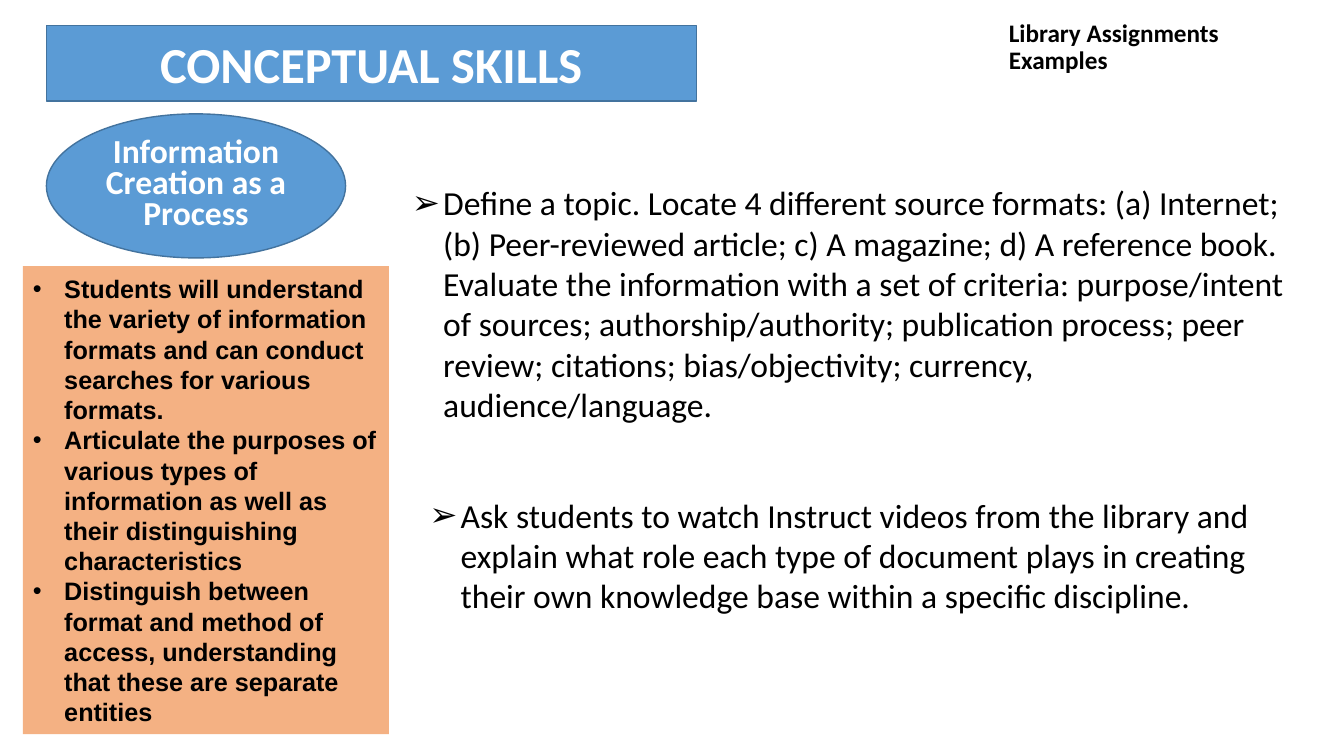
"""Build the slide on conceptual skills and library assignment examples."""
from lxml import etree
from pptx import Presentation
from pptx import util as u
from pptx.dml.color import RGBColor
from pptx.enum import shapes, text
from pptx.oxml.ns import qn

BLUE, EDGE, PEACH, WHITE, BLACK = "5B9BD5", "43739E", "F4B183", "FFFFFF", "000000"
HANG = u.Cm(0.79)


def color(value):
    return RGBColor.from_string(value)


def write(box, lines, size, ink=BLACK, bold=False, face="Calibri", bullet=None,
          anchor=text.MSO_ANCHOR.TOP, **layout):
    frame = box.text_frame
    frame.auto_size = text.MSO_AUTO_SIZE.NONE
    frame.word_wrap = True
    frame.vertical_anchor = anchor
    for index, line in enumerate(lines):
        para = frame.paragraphs[0] if index == 0 else frame.add_paragraph()
        for name, value in layout.items():
            setattr(para, name, value)
        span = para.add_run()
        span.text = line
        for name, value in {"size": u.Pt(size), "bold": bold, "name": face}.items():
            setattr(span.font, name, value)
        span.font.color.rgb = color(ink)
        if bullet:
            props = para._p.get_or_add_pPr()
            props.set("marL", str(HANG))
            props.set("indent", str(-HANG))
            etree.SubElement(props, qn("a:buFont")).set("typeface", "Arial")
            etree.SubElement(props, qn("a:buChar")).set("char", bullet)


deck = Presentation()
deck.slide_width, deck.slide_height = u.Cm(33.87), u.Cm(19.05)
page = deck.slides.add_slide(deck.slide_layouts[5])

title = page.shapes.title
bounds = {"left": 25.17, "top": 0.48, "width": 8.1, "height": 1.45}
for name, value in bounds.items():
    setattr(title, name, u.Cm(value))
write(title, ["Library Assignments Examples"], 18, bold=True,
      anchor=text.MSO_ANCHOR.MIDDLE, alignment=text.PP_ALIGN.LEFT, line_spacing=0.9)

outcomes = [
    "Students will understand the variety of information formats and can conduct searches for various formats.",
    "Articulate the purposes of various types of information as well as their distinguishing characteristics",
    "Distinguish between format and method of access, understanding that these are separate entities",
]
centred = {"ink": WHITE, "alignment": text.PP_ALIGN.CENTER}
panels = [
    (shapes.MSO_SHAPE.RECTANGLE, (1.17, 0.64, 16.38, 1.91), BLUE, EDGE,
     ["CONCEPTUAL SKILLS"], {"size": 36, **centred}),
    (shapes.MSO_SHAPE.OVAL, (1.17, 2.87, 7.54, 3.63), BLUE, EDGE,
     ["Information Creation as a Process"],
     {"size": 24, "line_spacing": u.Pt(22), **centred}),
    (shapes.MSO_SHAPE.RECTANGLE, (0.58, 6.71, 9.22, 11.79), PEACH, None, outcomes,
     {"size": 18, "face": "Arial", "bullet": "•", "alignment": text.PP_ALIGN.LEFT}),
]
for kind, place, fill, edge, lines, style in panels:
    panel = page.shapes.add_shape(kind, *map(u.Cm, place))
    panel.shadow.inherit = False
    panel.fill.solid()
    panel.fill.fore_color.rgb = color(fill)
    if edge:
        panel.line.color.rgb = color(edge)
        panel.line.width = u.Pt(1)
    else:
        panel.line.fill.background()
    write(panel, lines, bold=True, anchor=text.MSO_ANCHOR.MIDDLE, **style)

assignments = [
    ((10.13, 4.47, 22.5, 6.4),
     "Define a topic. Locate 4 different source formats: (a) Internet; (b) Peer-reviewed article; "
     "c) A magazine; d) A reference book. Evaluate the information with a set of criteria: "
     "purpose/intent of sources; authorship/authority; publication process; peer review; "
     "citations; bias/objectivity; currency, audience/language."),
    ((10.57, 12.34, 21.62, 3.33),
     "Ask students to watch Instruct videos from the library and explain what role each type of "
     "document plays in creating their own knowledge base within a specific discipline."),
]
for place, task in assignments:
    write(page.shapes.add_textbox(*map(u.Cm, place)), [task], 24, bullet="➢")

deck.save("out.pptx")
